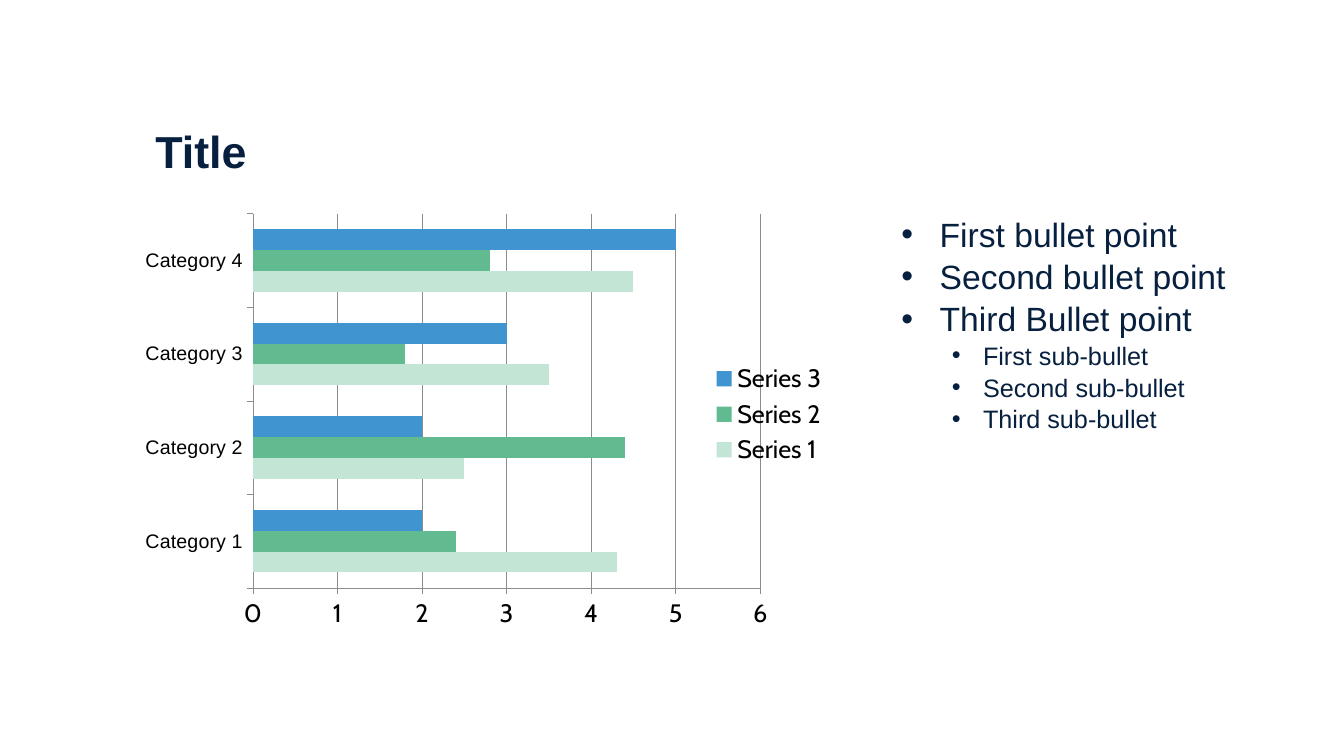
"""Build a slide with a title, a clustered bar chart and a bullet list."""
from lxml import etree
from pptx import Presentation, util as u
from pptx.chart.data import CategoryChartData
from pptx.dml.color import RGBColor
from pptx.enum import chart as ch, text as tx
from pptx.oxml import parse_xml
from pptx.oxml.ns import nsdecls, qn

TITLE = "Title"
POINTS = [
    (0, "First bullet point"),
    (0, "Second bullet point"),
    (0, "Third Bullet point"),
    (1, "First sub-bullet"),
    (1, "Second sub-bullet"),
    (1, "Third sub-bullet"),
]
CATS = ["Category 1", "Category 2", "Category 3", "Category 4"]
SERIES = [
    ("Series 1", "C3E5D5", (4.3, 2.5, 3.5, 4.5)),
    ("Series 2", "62BA90", (2.4, 4.4, 1.8, 2.8)),
    ("Series 3", "4094D0", (2, 2, 3, 5)),
]
BOXES = {
    "title": (144, 117, 663, 64),
    "chart": (132, 190, 699, 442),
    "list": (884, 205, 426, 295),
}
PLOT = {"x": 0.17, "y": 0.05, "w": 0.72, "h": 0.84}
INDENTS = [(38, -38), (81, -31)]
THEME = {
    "ink": "07203F", "black": "000000", "rule": "8C8C8C",
    "head": 32, "levels": (24, 18), "cats": 14, "chart": 18,
    "text": "Arial", "plot": "Cabin", "line": 0.5, "space": 1.05,
}


def px(n):
    return u.Emu(n * 9144)


def put(obj, vals):
    for key, val in vals.items():
        setattr(obj, key, val)


def place(shape, box):
    put(shape, dict(zip(("left", "top", "width", "height"), map(px, box))))


def style(font, size, face="text", ink="ink", bold=False):
    put(font, {"size": u.Pt(size), "name": THEME[face], "bold": bold})
    font.color.rgb = RGBColor.from_string(THEME[ink])


def frame(shape, box, anchor):
    place(shape, box)
    put(shape.text_frame, {"word_wrap": True, "vertical_anchor": anchor,
                           "auto_size": tx.MSO_AUTO_SIZE.NONE})
    return shape.text_frame


def space(par):
    put(par, {"alignment": tx.PP_ALIGN.LEFT, "line_spacing": THEME["space"],
              "space_before": u.Pt(0), "space_after": u.Pt(0)})


def add_title(slide):
    par = frame(slide.shapes.title, BOXES["title"], tx.MSO_ANCHOR.BOTTOM).paragraphs[0]
    par.text = TITLE
    space(par)
    style(par.runs[0].font, THEME["head"], bold=True)


def add_list(slide):
    body = frame(slide.placeholders[1], BOXES["list"], tx.MSO_ANCHOR.TOP)
    for num, (level, words) in enumerate(POINTS):
        par = body.add_paragraph() if num else body.paragraphs[0]
        par.text, par.level = words, level
        space(par)
        prop = par._p.get_or_add_pPr()
        for key, val in zip(("marL", "indent"), INDENTS[level]):
            prop.set(key, str(px(val)))
        etree.SubElement(prop, qn("a:buFont")).set("typeface", THEME["text"])
        etree.SubElement(prop, qn("a:buChar")).set("char", "•")
        style(par.font, THEME["levels"][level])
        style(par.runs[0].font, THEME["levels"][level])


def rule(line):
    line.width = u.Pt(THEME["line"])
    line.color.rgb = RGBColor.from_string(THEME["rule"])


def fix_plot(chart):
    modes = '<c:layoutTarget val="inner"/><c:xMode val="edge"/><c:yMode val="edge"/>'
    sizes = "".join(f'<c:{key} val="{val}"/>' for key, val in PLOT.items())
    area = chart._chartSpace.chart.plotArea
    for old in area.findall(qn("c:layout")):
        area.remove(old)
    area.insert(0, parse_xml(f'<c:layout {nsdecls("c")}><c:manualLayout>{modes}{sizes}'
                             '</c:manualLayout></c:layout>'))


def add_chart(slide):
    data = CategoryChartData()
    data.categories = CATS
    for name, _, vals in SERIES:
        data.add_series(name, vals)
    chart = slide.shapes.add_chart(ch.XL_CHART_TYPE.BAR_CLUSTERED,
                                   *map(px, BOXES["chart"]), data).chart
    put(chart, {"has_title": False, "has_legend": True})
    put(chart.legend, {"position": ch.XL_LEGEND_POSITION.RIGHT,
                       "include_in_layout": False})
    put(chart.plots[0], {"gap_width": 150, "overlap": 0, "vary_by_categories": False})
    for font in (chart.font, chart.legend.font):
        style(font, THEME["chart"], "plot", "black")
    for bars, (_, fill, _) in zip(chart.plots[0].series, SERIES):
        bars.format.fill.solid()
        bars.format.fill.fore_color.rgb = RGBColor.from_string(fill)
    cat, val = chart.category_axis, chart.value_axis
    for axis, size, face in ((cat, "cats", "text"), (val, "chart", "plot")):
        put(axis, {"major_tick_mark": ch.XL_TICK_MARK.OUTSIDE,
                   "minor_tick_mark": ch.XL_TICK_MARK.NONE})
        style(axis.tick_labels.font, THEME[size], face, "black")
        rule(axis.format.line)
    put(val, {"minimum_scale": 0, "maximum_scale": 6, "major_unit": 1,
              "has_major_gridlines": True})
    rule(val.major_gridlines.format.line)
    fix_plot(chart)


def main():
    deck = Presentation()
    put(deck, {"slide_width": px(1333), "slide_height": px(750)})
    slide = deck.slides.add_slide(deck.slide_layouts[1])
    add_chart(slide)
    add_list(slide)
    add_title(slide)
    deck.save("out.pptx")


if __name__ == "__main__":
    main()
